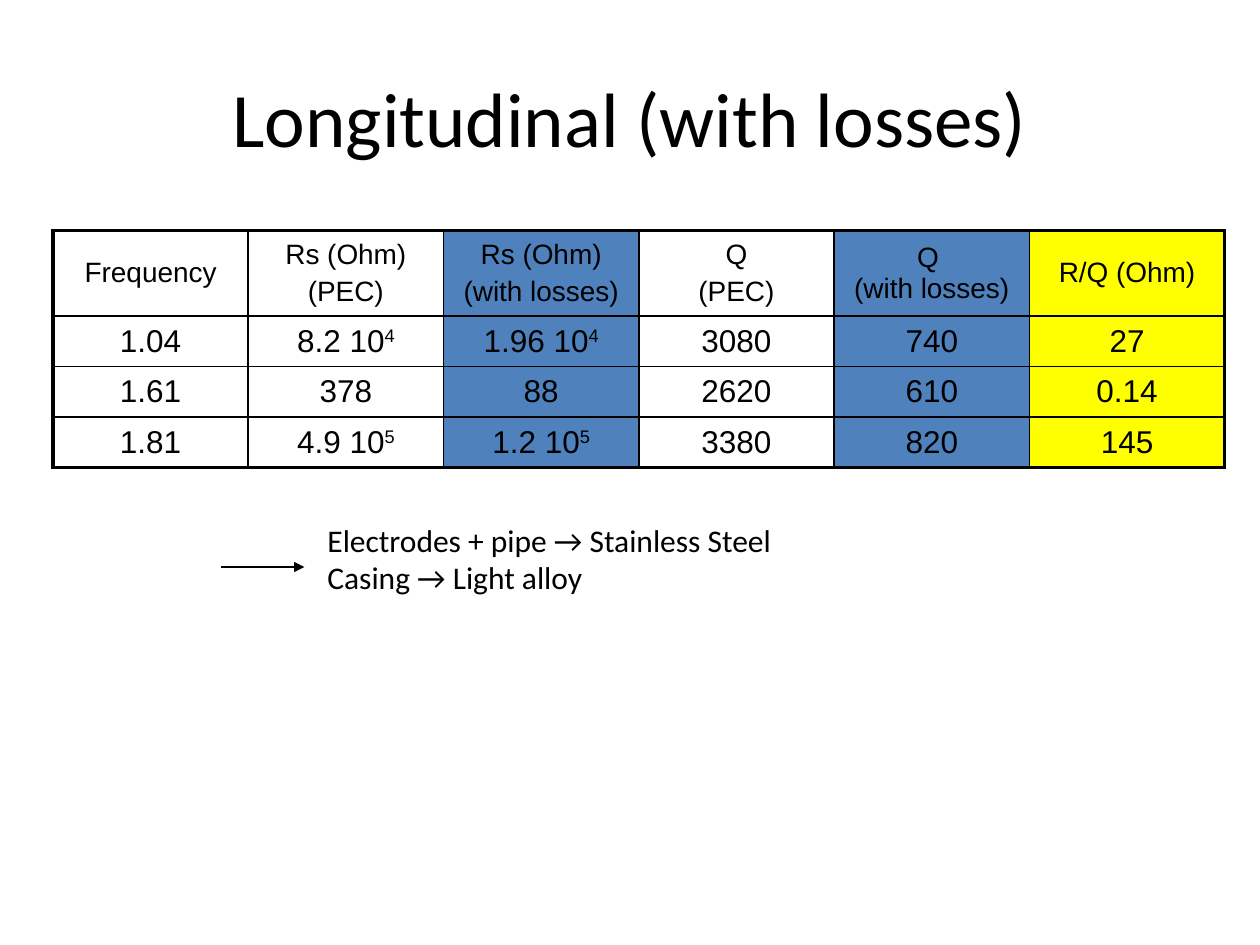
from lxml.etree import SubElement
from pptx import Presentation
from pptx.dml.color import RGBColor
from pptx.enum.shapes import MSO_CONNECTOR as Link
from pptx.enum.text import MSO_ANCHOR as Anchor, MSO_AUTO_SIZE as Fit, PP_ALIGN as Align
from pptx.oxml.ns import qn
from pptx.util import Pt

TITLE = "Longitudinal (with losses)"
NOTES = ["Electrodes + pipe → Stainless Steel", "Casing → Light alloy"]
# A list cell has one paragraph per item; ^ starts a superscript; \v breaks a line.
ROWS = [
    [["Frequency"], ["Rs (Ohm)", "(PEC)"], ["Rs (Ohm)", "(with losses)"],
     ["Q", "(PEC)"], ["Q \v(with losses)"], ["R/Q (Ohm)"]],
    [["1.04"], ["8.2 10^4"], ["1.96 10^4"], ["3080"], ["740"], ["27"]],
    [["1.61"], ["378"], ["88"], ["2620"], ["610"], ["0.14"]],
    [["1.81"], ["4.9 10^5"], ["1.2 10^5"], ["3380"], ["820"], ["145"]],
]
BLACK, BLUE, YELLOW = "000000", "4F81BD", "FFFF00"
FILLS = [None, None, BLUE, None, BLUE, YELLOW]
COL, HEAD, BODY = 111.6, 33.84, 23.76
THIN, THICK = 1, 2.25


def color(code):
    return RGBColor.from_string(code)


def style(run, size, name):
    for key, value in {"size": Pt(size), "name": name}.items():
        setattr(run.font, key, value)
    run.font.color.rgb = color(BLACK)


def write(frame, lines, size, name, align, gap=0):
    for i, line in enumerate(lines):
        para = frame.paragraphs[0] if i == 0 else frame.add_paragraph()
        base, _, power = line.partition("^")
        para.text = base
        para.alignment = align
        para.space_before = Pt(gap)
        if power:
            run = para.add_run()
            run.text = power
            run.font._element.set("baseline", "30000")
        for run in para.runs:
            style(run, size, name)


def edge(cell, side, width):
    line = SubElement(cell._tc.get_or_add_tcPr(), qn("a:ln" + side), w=str(Pt(width)))
    fill = SubElement(line, qn("a:solidFill"))
    SubElement(fill, qn("a:srgbClr"), val=BLACK)


def add_text(slide, box, lines, size, align, **format):
    frame = slide.shapes.add_textbox(*map(Pt, box)).text_frame
    for key, value in format.items():
        setattr(frame, key, value)
    write(frame, lines, size, "Calibri", align)


def add_grid(slide):
    count, width = len(ROWS), len(FILLS)
    high = HEAD + BODY * (count - 1)
    table = slide.shapes.add_table(
        count, width, Pt(30.24), Pt(131.76), Pt(COL * width), Pt(high)).table
    table.first_row = table.horz_banding = False
    for col in table.columns:
        col.width = Pt(COL)
    for r, row in enumerate(ROWS):
        table.rows[r].height = Pt(BODY if r else HEAD)
        size = 18 if r else 16
        for c, lines in enumerate(row):
            cell = table.cell(r, c)
            cell.vertical_anchor = Anchor.MIDDLE
            write(cell.text_frame, lines, size, "Arial", Align.CENTER, size * 0.2)
            outer = {"L": c == 0, "R": c == width - 1, "T": r == 0, "B": r == count - 1}
            for side, thick in outer.items():
                edge(cell, side, THICK if thick else THIN)
            if FILLS[c]:
                cell.fill.solid()
                cell.fill.fore_color.rgb = color(FILLS[c])
            else:
                cell.fill.background()


def add_arrow(slide, start, end):
    arrow = slide.shapes.add_connector(Link.STRAIGHT, *map(Pt, start + end))
    arrow.line.width = Pt(0.75)
    arrow.line.color.rgb = color(BLACK)
    SubElement(arrow.line._get_or_add_ln(), qn("a:tailEnd"), type="triangle")
    SubElement(arrow._element.spPr, qn("a:effectLst"))


def main():
    deck = Presentation()
    deck.slide_width, deck.slide_height = Pt(720), Pt(540)
    slide = deck.slides.add_slide(deck.slide_layouts[6])
    add_text(slide, (36, 21.6, 648, 90), [TITLE], 44, Align.CENTER,
             word_wrap=True, vertical_anchor=Anchor.MIDDLE)
    add_grid(slide)
    add_arrow(slide, (126, 324), (174, 324))
    add_text(slide, (180, 294, 301, 50.4), NOTES, 18, Align.LEFT,
             word_wrap=False, auto_size=Fit.SHAPE_TO_FIT_TEXT)
    deck.save("out.pptx")


if __name__ == "__main__":
    main()
